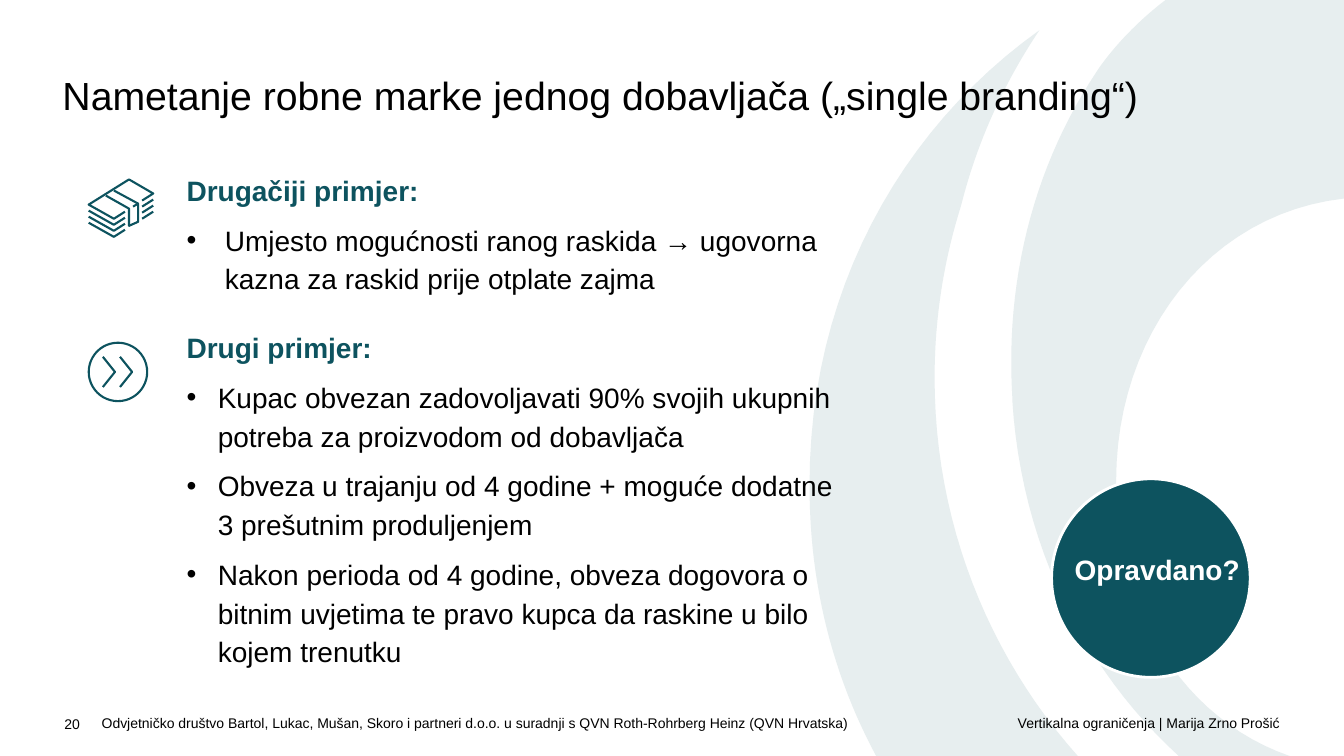
"""Build the slide on single branding with two examples and a question badge."""
from lxml.etree import SubElement
from pptx import Presentation
from pptx.dml.color import RGBColor
from pptx.enum.shapes import MSO_CONNECTOR, MSO_SHAPE
from pptx.enum.text import MSO_ANCHOR, PP_ALIGN
from pptx.oxml.ns import qn
from pptx.util import Inches, Pt

TEAL = RGBColor(0x0D, 0x53, 0x5F)
PALE = RGBColor(0xE7, 0xEE, 0xEF)
BLACK = RGBColor(0, 0, 0)
WHITE = RGBColor(255, 255, 255)

TITLE = "Nametanje robne marke jednog dobavljača („single branding“)"
FIRM = ("Odvjetničko društvo Bartol, Lukac, Mušan, Skoro i partneri d.o.o. "
        "u suradnji s QVN Roth-Rohrberg Heinz (QVN Hrvatska)")
TALK = "Vertikalna ograničenja | Marija Zrno Prošić"
CASES = [
    (1.67, 0.38, "Drugačiji primjer:", [
        "Umjesto mogućnosti ranog raskida → ugovorna kazna za raskid prije otplate zajma",
    ]),
    (3.23, 0.31, "Drugi primjer:", [
        "Kupac obvezan zadovoljavati 90% svojih ukupnih potreba za proizvodom od dobavljača",
        "Obveza u trajanju od 4 godine + moguće dodatne 3 prešutnim produljenjem",
        "Nakon perioda od 4 godine, obveza dogovora o bitnim uvjetima te pravo kupca "
        "da raskine u bilo kojem trenutku",
    ]),
]

SWEEPS = [
    [(12.79, 7.5), (11.75, 7.14, 11.07, 6.08, 11.07, 4.8), (11.07, 4.77),
     (11.07, 3.32, 11.99, 2.12, 13.33, 1.97), (13.33, 0), (11.56, 0),
     (11.22, 0.26, 11, 0.53, 10.89, 0.69), (10.8, 0.83),
     (10.25, 1.71, 9.97, 2.78, 10.04, 3.94), (10.04, 3.97),
     (10.13, 5.41, 10.75, 6.64, 11.69, 7.5)],
    [(9.27, 3.75), (9.27, 3.16, 9.36, 2.59, 9.53, 2.05),
     (9.69, 1.41, 9.96, 0.82, 10.31, 0.3),
     (8.91, 1.3, 8.03, 2.92, 8.03, 4.8), (8.03, 4.83),
     (8.03, 5.82, 8.27, 6.72, 8.69, 7.5), (10.69, 7.5),
     (9.8, 6.5, 9.27, 5.18, 9.27, 3.75)],
]
NOTE = [(1.41, 1.99), (1.52, 1.92), (1.28, 1.78), (0.88, 2.03), (1.13, 2.17), (1.24, 2.1)]
BAND = [(1.05, 1.94), (1.28, 2.07), (1.28, 2.24), (1.37, 2.2), (1.37, 2.02), (1.13, 1.89)]
FOLD = [(1.32, 2.05), (1.37, 2.02)]
EDGE = [(0.88, 2.09), (1.13, 2.23), (1.24, 2.16)]
SIDE = [(1.41, 2.05), (1.52, 1.98)]
ARROW = [(1.02, 3.54), (1.14, 3.69), (1.02, 3.84)]

prs = Presentation()
prs.slide_width, prs.slide_height = Inches(13.33), Inches(7.5)
slide = prs.slides.add_slide(prs.slide_layouts[6])
shapes = slide.shapes


def apply(item, form):
    for key, value in form.items():
        setattr(item, key, value)


def trace(steps, count=24):
    """Turn corners and cubic curves into points."""
    dots = [steps[0]]
    for step in steps[1:]:
        if len(step) == 2:
            dots.append(step)
            continue
        ends = [dots[-1], step[:2], step[2:4], step[4:]]
        for n in range(1, count + 1):
            t = n / count
            mix = ((1 - t) ** 3, 3 * t * (1 - t) ** 2, 3 * t * t * (1 - t), t ** 3)
            dots.append(tuple(sum(m * p[i] for m, p in zip(mix, ends)) for i in (0, 1)))
    return dots


def outline(dots, close):
    pts = [(Inches(x), Inches(y)) for x, y in dots]
    build = shapes.build_freeform(*pts[0], scale=1.0)
    build.add_line_segments(pts[1:], close=close)
    shape = build.convert_to_shape()
    shape.shadow.inherit = False
    return shape


def stroke(dots, dx=0, dy=0):
    dots = [(x + dx, y + dy) for x, y in dots]
    if len(dots) == 2:
        ends = [Inches(v) for dot in dots for v in dot]
        shape = shapes.add_connector(MSO_CONNECTOR.STRAIGHT, *ends)
        SubElement(shape.line._get_or_add_ln().getparent(), qn("a:effectLst"))
    else:
        shape = outline(dots, False)
        shape.fill.background()
    shape.line.color.rgb = TEAL
    shape.line.width = Pt(1.5)


def disc(x, y, size, width, color):
    shape = shapes.add_shape(MSO_SHAPE.OVAL, *map(Inches, (x, y, size, size)))
    shape.shadow.inherit = False
    shape.line.width = Pt(width)
    shape.line.color.rgb = color
    return shape


def write(para, text, size, color=BLACK, bold=False, **form):
    run = para.add_run()
    run.text = text
    apply(run.font, {"name": "Arial", "size": Pt(size), "bold": bold})
    run.font.color.rgb = color
    apply(para, form)


def box(x, y, w, h, **form):
    frame = shapes.add_textbox(*map(Inches, (x, y, w, h))).text_frame
    apply(frame, {"word_wrap": True, **form})
    return frame


def bullet(para, hang):
    props = para._p.get_or_add_pPr()
    props.set("marL", str(Inches(hang)))
    props.set("indent", str(-Inches(hang)))
    SubElement(props, qn("a:buFont")).set("typeface", "Arial")
    SubElement(props, qn("a:buChar")).set("char", "•")


for sweep in SWEEPS:
    shape = outline(trace(sweep), True)
    shape.fill.solid()
    shape.fill.fore_color.rgb = PALE
    shape.line.fill.background()

FLUSH = {"margin_" + side: 0 for side in ("left", "right", "top", "bottom")}
MIDDLE = {"vertical_anchor": MSO_ANCHOR.MIDDLE}
SPACED = {"line_spacing": 1.15, "space_after": Pt(8)}

frame = box(0.62, 0.61, 12.07, 0.79, **FLUSH, **MIDDLE)
write(frame.paragraphs[0], TITLE, 28, line_spacing=Pt(24))

for top, hang, head, points in CASES:
    frame = box(1.85, top, 6.52, 0.93, **{**FLUSH, "margin_bottom": Inches(0.12)})
    write(frame.paragraphs[0], head, 20, TEAL, True, **SPACED)
    for point in points:
        para = frame.add_paragraph()
        bullet(para, hang)
        write(para, point, 20, **SPACED)

for part in (NOTE, BAND, FOLD):
    stroke(part)
for n in range(3):
    stroke(EDGE, dy=0.06 * n)
    stroke(SIDE, dy=0.06 * n)
for n in range(2):
    stroke(ARROW, dx=0.17 * n)
disc(0.88, 3.4, 0.58, 1.5, TEAL).fill.background()

write(box(0.91, 6.85, 7.85, 0.65, **MIDDLE).paragraphs[0], FIRM, 10)
frame = box(9.15, 6.85, 3.54, 0.65, **FLUSH, **MIDDLE)
write(frame.paragraphs[0], TALK, 10, alignment=PP_ALIGN.RIGHT)
write(box(0.54, 7.05, 0.42, 0.45).paragraphs[0], "20", 10)

badge = disc(10.43, 4.75, 1.97, 2, WHITE)
badge.fill.solid()
badge.fill.fore_color.rgb = TEAL
write(box(10.56, 5.43, 1.85, 0.44).paragraphs[0], "Opravdano?", 20, WHITE, True)

prs.save("out.pptx")
